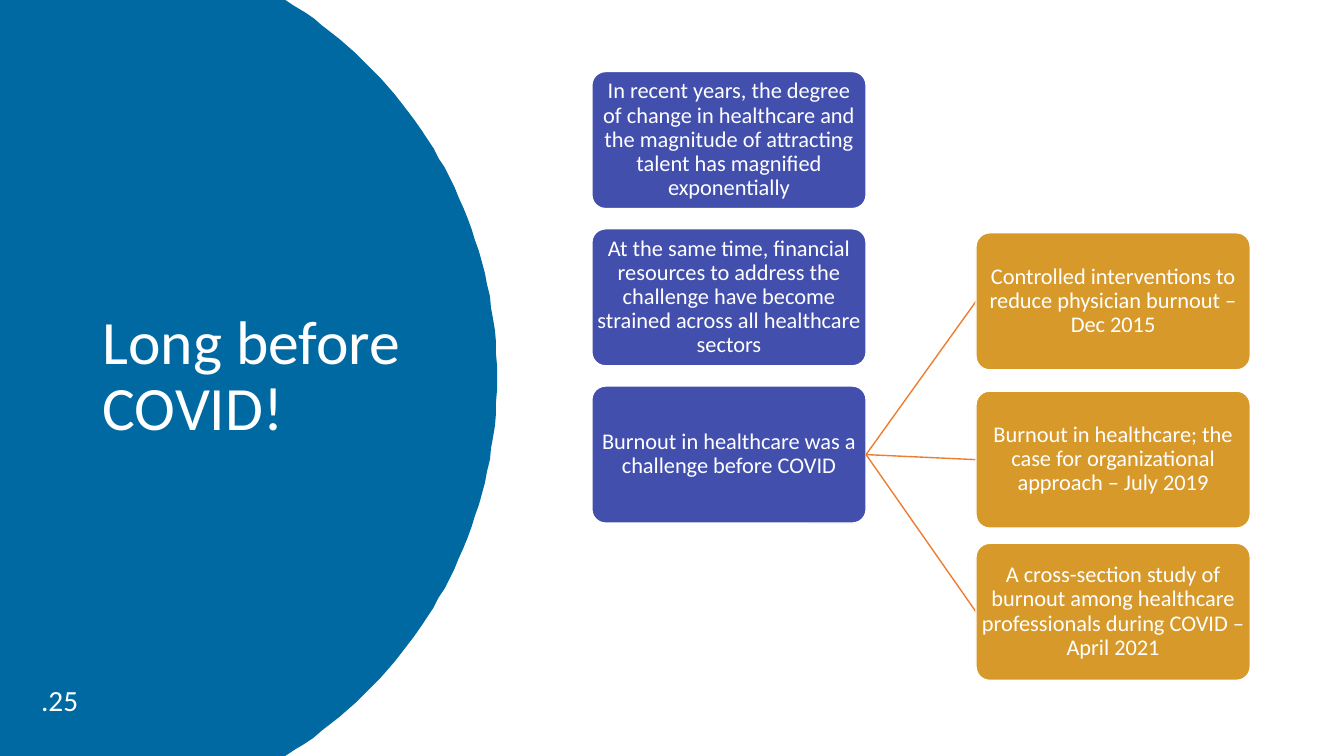
"""Build the slide on healthcare burnout before COVID."""
from lxml import etree
from pptx import Presentation, util as u
from pptx.dml.color import RGBColor
from pptx.enum import shapes, text
from pptx.oxml.ns import qn

TITLE = "Long before COVID!"
PAGE = ".25"
CAUSES = [
    "In recent years, the degree of change in healthcare and the magnitude of attracting talent has magnified exponentially",
    "At the same time, financial resources to address the challenge have become strained across all healthcare sectors",
    "Burnout in healthcare was a challenge before COVID",
]
STUDIES = [
    (231, "Controlled interventions to reduce physician burnout – Dec 2015"),
    (388, "Burnout in healthcare; the case for organizational approach – July 2019"),
    (539, "A cross-section study of burnout among healthcare professionals during COVID – April 2021"),
]
THEME = dict(font="Calibri", panel="0069A1", cause="434FAD", study="D7992A",
             link="ED7D31", white="FFFFFF", title=44, body=16, page=20.9)

PX = 9144
SLIDE_W, SLIDE_H = 1333, 750
BOX_W, BOX_H = 272, 136
CAUSE_X, CAUSE_Y, CAUSE_STEP = 587, 71, 156
STUDY_X = 968
CURVE = [(283, 0), (409, 77), (493, 216), (493, 375)]
CURVE_STEPS = 40


def color(name):
    return RGBColor.from_string(THEME[name])


def write(sp, content, *, size, align=text.PP_ALIGN.LEFT, spacing=0.9, inset=(10, 5)):
    tf = sp.text_frame
    tf.word_wrap = True
    tf.vertical_anchor = text.MSO_ANCHOR.MIDDLE
    tf.margin_left = tf.margin_right = inset[0] * PX
    tf.margin_top = tf.margin_bottom = inset[1] * PX
    p = tf.paragraphs[0]
    p.alignment = align
    p.line_spacing = spacing
    r = p.add_run()
    r.text = content
    r.font.name = THEME["font"]
    r.font.size = u.Pt(THEME[size])
    r.font.color.rgb = color("white")


def add_label(s, box, content, **style):
    sp = s.shapes.add_textbox(*(n * PX for n in box))
    write(sp, content, **style)


def add_card(s, x, y, content, fill):
    sp = s.shapes.add_shape(shapes.MSO_SHAPE.ROUNDED_RECTANGLE,
                            x * PX, y * PX, BOX_W * PX, BOX_H * PX)
    sp.adjustments[0] = 0.1
    sp.shadow.inherit = False
    sp.fill.solid()
    sp.fill.fore_color.rgb = color(fill)
    sp.line.color.rgb = color("white")
    sp.line.width = u.Pt(1)
    write(sp, content, size="body", align=text.PP_ALIGN.CENTER, inset=(1, 1))


def add_link(s, x1, y1, x2, y2):
    line = s.shapes.add_connector(shapes.MSO_CONNECTOR.STRAIGHT,
                                  x1 * PX, y1 * PX, x2 * PX, y2 * PX)
    line.line.color.rgb = color("link")
    line.line.width = u.Pt(1)
    etree.SubElement(line._element.spPr, qn("a:effectLst"))


def curve_point(t):
    weights = ((1 - t) ** 3, 3 * t * (1 - t) ** 2, 3 * t * t * (1 - t), t ** 3)
    return tuple(sum(w * pt[axis] for w, pt in zip(weights, CURVE)) for axis in (0, 1))


def add_panel(s):
    upper = [curve_point(i / CURVE_STEPS) for i in range(CURVE_STEPS + 1)]
    lower = [(x, SLIDE_H - y) for x, y in reversed(upper[:-1])]
    builder = s.shapes.build_freeform(0, 0, scale=PX)
    builder.add_line_segments(upper + lower + [(0, SLIDE_H)], close=True)
    sp = builder.convert_to_shape()
    sp.shadow.inherit = False
    sp.fill.solid()
    sp.fill.fore_color.rgb = color("panel")
    sp.line.fill.background()


def main():
    prs = Presentation()
    prs.slide_width, prs.slide_height = SLIDE_W * PX, SLIDE_H * PX
    s = prs.slides.add_slide(prs.slide_layouts[6])
    add_panel(s)
    add_label(s, (92, 70, 323, 609), TITLE, size="title")
    for i, cause in enumerate(CAUSES):
        cause_y = CAUSE_Y + i * CAUSE_STEP
        add_card(s, CAUSE_X, cause_y, cause, "cause")
    for study_y, study in STUDIES:
        add_link(s, CAUSE_X + BOX_W, cause_y + BOX_H // 2, STUDY_X, study_y + BOX_H // 2)
        add_card(s, STUDY_X, study_y, study, "study")
    add_label(s, (31, 680, 323, 37), PAGE, size="page", spacing=0.7)
    prs.save("out.pptx")


if __name__ == "__main__":
    main()
